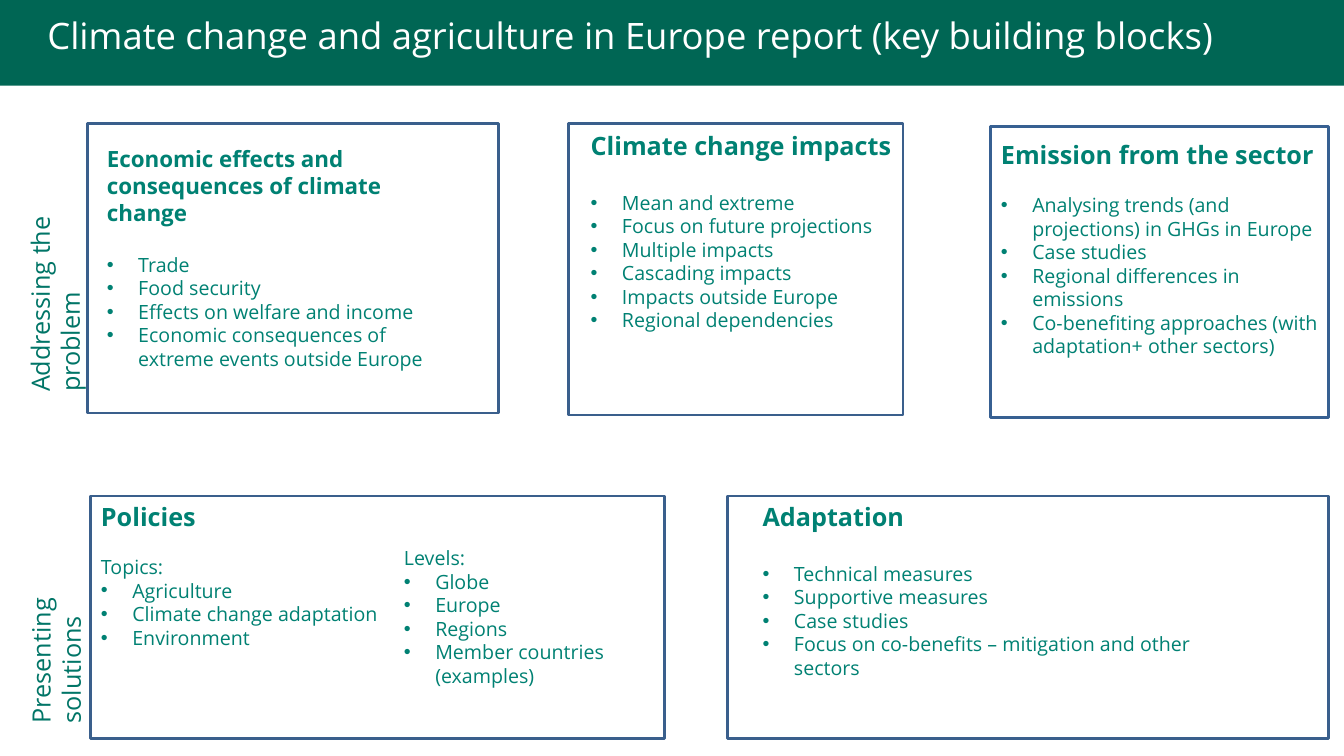
from lxml.etree import SubElement
from pptx import Presentation
from pptx.dml.color import RGBColor
from pptx.enum.shapes import MSO_SHAPE
from pptx.enum.text import MSO_ANCHOR, MSO_AUTO_SIZE, PP_ALIGN
from pptx.oxml.ns import qn
from pptx.util import Cm, Pt

COLORS = {
    "band": "006654",
    "frame": "3A5F8C",
    "emission_frame": "376092",
    "text": "008173",
    "label": "017567",
    "title": "FFFFFF",
}
FONT = "Open Sans"
LIST_SIZE = 14
HANGING = Cm(0.79)
LINE_HEIGHT = 1.2

# Each block: frame, frame colour, text area, heading, heading size, gap size, intro, items
BLOCKS = [
    ((2.21, 3.12, 10.36, 7.29), "frame", (2.44, 3.53, 9.17, 6.93),
     "Economic effects and consequences of climate change", 16, 16, None,
     ["Trade", "Food security", "Effects on welfare and income",
      "Economic consequences of extreme events outside Europe"]),
    ((14.33, 3.12, 8.43, 7.34), "frame", (14.63, 3.15, 8.33, 6.93),
     "Climate change impacts", 18, 18, None,
     ["Mean and extreme", "Focus on future projections", "Multiple impacts",
      "Cascading impacts", "Impacts outside Europe", "Regional dependencies"]),
    ((24.97, 3.18, 8.51, 7.34), "emission_frame", (24.97, 3.38, 8.51, 6.2),
     "Emission from the sector", 18, 14, None,
     ["Analysing trends (and projections) in GHGs in Europe", "Case studies",
      "Regional differences in emissions",
      "Co-benefiting approaches (with adaptation+ other sectors)"]),
    ((2.29, 12.5, 14.45, 6.12), "frame", (2.29, 12.5, 14.38, 5.21),
     "Policies", 18, 14, "Topics:",
     ["Agriculture", "Climate change adaptation", "Environment"]),
    ((18.34, 12.5, 15.14, 6.12), "frame", (18.97, 12.5, 12.9, 5.13),
     "Adaptation", 18, 18, None,
     ["Technical measures", "Supportive measures", "Case studies",
      "Focus on co-benefits – mitigation and other sectors"]),
]
LEVELS_AREA = (9.93, 13.64, 6.73, 3.84)
LEVELS = ["Globe", "Europe", "Regions", "Member countries"]
SIDE_LABELS = [
    ("Addressing the problem", (-2.64, 5.97, 7.29, 1.02)),
    ("Presenting solutions", (-2.11, 14.83, 6.27, 1.02)),
]


def color(name):
    return RGBColor.from_string(COLORS[name])


def place(shape, area):
    shape.left, shape.top, shape.width, shape.height = (Cm(value) for value in area)


def prepare_text(shape, area):
    """Move a text shape and give it top-anchored wrapping text."""
    place(shape, area)
    frame = shape.text_frame
    frame.word_wrap = True
    frame.auto_size = MSO_AUTO_SIZE.NONE
    frame.vertical_anchor = MSO_ANCHOR.TOP
    return frame


def add_paragraph(frame, text, size=LIST_SIZE, color_name="text", bold=False,
                  bullet=False, indented=False, gap=0):
    first = frame.paragraphs[0]
    paragraph = frame.add_paragraph() if first.runs else first
    properties = paragraph._p.get_or_add_pPr()
    properties.set("marL", str(HANGING if bullet or indented else 0))
    properties.set("indent", str(-HANGING if bullet else 0))
    paragraph.alignment = PP_ALIGN.LEFT
    paragraph.space_before = Pt(gap)
    if bullet:
        SubElement(properties, qn("a:buFont")).set("typeface", "Arial")
        SubElement(properties, qn("a:buChar")).set("char", "•")
    else:
        SubElement(properties, qn("a:buNone"))
    run = paragraph.add_run()
    run.text = text
    run.font.name = FONT
    run.font.size = Pt(size)
    run.font.bold = bold
    run.font.color.rgb = color(color_name)


def add_rectangle(slide, area, fill=None, line=None):
    """Add a rectangle behind everything already on the slide."""
    shape = slide.shapes.add_shape(MSO_SHAPE.RECTANGLE, *(Cm(value) for value in area))
    shape.shadow.inherit = False
    if fill:
        shape.fill.solid()
        shape.fill.fore_color.rgb = color(fill)
    else:
        shape.fill.background()
    if line:
        shape.line.color.rgb = color(line)
        shape.line.width = Pt(2)
    else:
        shape.line.fill.background()
    slide.shapes._spTree.insert(2, shape._element)


def add_text_box(slide):
    return slide.shapes.add_textbox(0, 0, 0, 0)


def fill_block(shape, area, heading, heading_size, gap_size, intro, items):
    frame = prepare_text(shape, area)
    gap = round(gap_size * LINE_HEIGHT, 1)
    add_paragraph(frame, heading, heading_size, bold=True)
    if intro:
        add_paragraph(frame, intro, gap=gap)
        gap = 0
    for position, item in enumerate(items):
        add_paragraph(frame, item, bullet=True, gap=0 if position else gap)


def add_levels(slide):
    frame = prepare_text(add_text_box(slide), LEVELS_AREA)
    add_paragraph(frame, "Levels:")
    for level in LEVELS:
        add_paragraph(frame, level, bullet=True)
    add_paragraph(frame, "(examples)", indented=True)


def add_side_label(slide, text, area):
    shape = add_text_box(slide)
    add_paragraph(prepare_text(shape, area), text, 18, "label")
    shape.rotation = 270


def main():
    presentation = Presentation()
    presentation.slide_width, presentation.slide_height = Cm(33.87), Cm(19.05)
    slide = presentation.slides.add_slide(presentation.slide_layouts.get_by_name("Comparison"))

    # Title on its band
    add_rectangle(slide, (0, 0, 33.87, 2.16), fill="band")
    title = prepare_text(slide.shapes.title, (0.94, 0.2, 32.9, 2.31))
    add_paragraph(title, "Climate change and agriculture in Europe report (key building blocks)",
                  26, "title")

    # Framed blocks: body placeholders first, then a text box
    bodies = [shape for shape in slide.placeholders if shape.placeholder_format.idx > 0]
    bodies.append(add_text_box(slide))
    for body, (frame_area, line, *content) in zip(bodies, BLOCKS):
        add_rectangle(slide, frame_area, line=line)
        fill_block(body, *content)
    add_levels(slide)

    # Row labels
    for text, area in SIDE_LABELS:
        add_side_label(slide, text, area)

    presentation.save("out.pptx")


if __name__ == "__main__":
    main()
